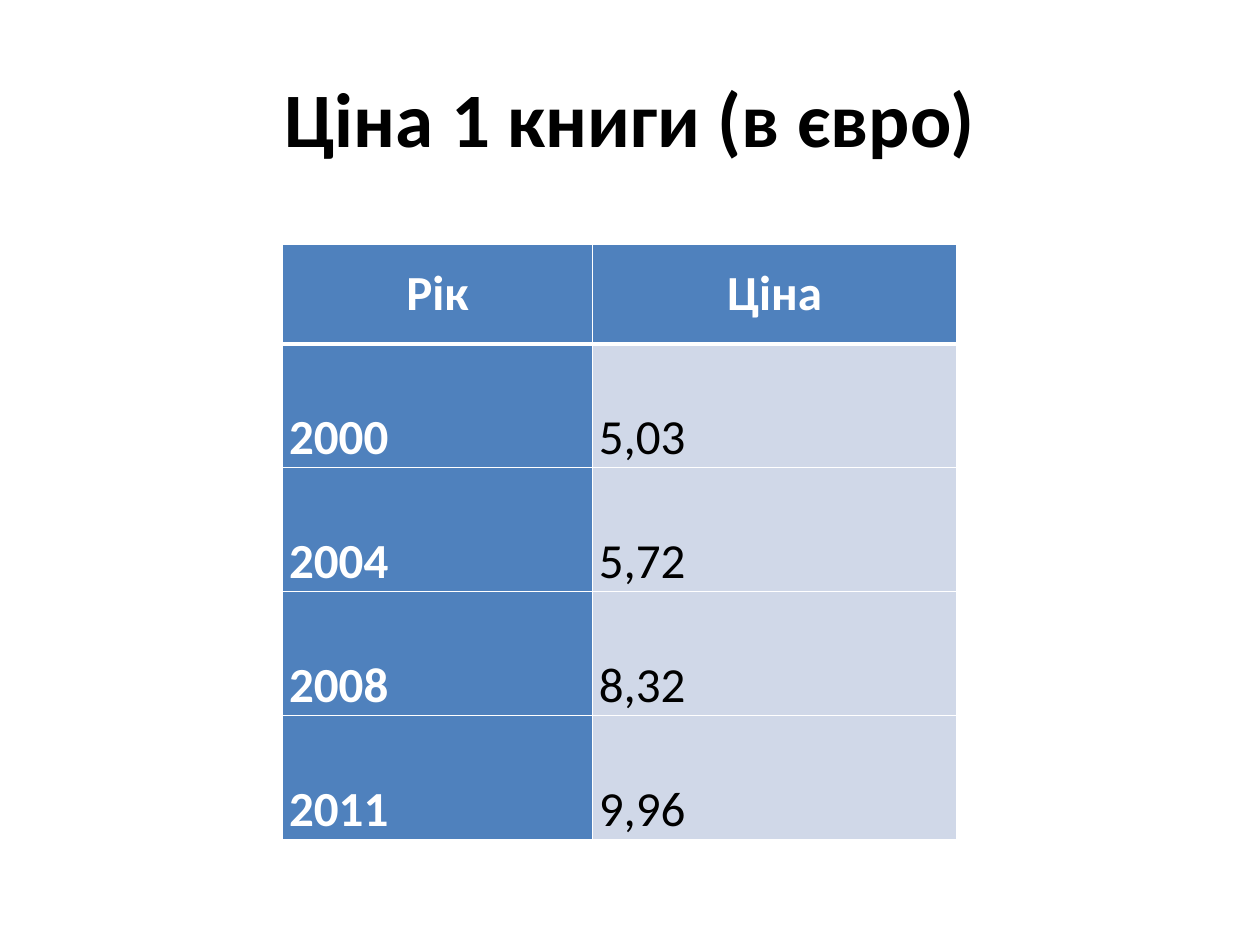
from lxml.etree import SubElement
from pptx import Presentation
from pptx.dml.color import RGBColor
from pptx.enum.text import MSO_ANCHOR, PP_ALIGN
from pptx.oxml.ns import qn
from pptx.util import Pt

WHITE, BLACK, BLUE, PALE = "FFFFFF", "000000", "4F81BD", "D0D8E8"
ROWS = [("Рік", "Ціна"), ("2000", "5,03"), ("2004", "5,72"), ("2008", "8,32"), ("2011", "9,96")]


def rgb(value):
    return RGBColor.from_string(value)


class Deck:
    """Holds the text style and the current slide."""

    def __init__(self, s, font="Calibri"):
        self.s, self.font = s, font

    def add_text(self, tf, text, size, color, bold, align):
        p = tf.paragraphs[0]
        p.alignment = align
        r = p.add_run()
        r.text = text
        r.font.name, r.font.size, r.font.bold = self.font, Pt(size), bold
        r.font.color.rgb = rgb(color)

    def title(self, text, left, top, width, height):
        tf = self.s.shapes.add_textbox(Pt(left), Pt(top), Pt(width), Pt(height)).text_frame
        tf.word_wrap = True
        tf.vertical_anchor = MSO_ANCHOR.MIDDLE
        self.add_text(tf, text, 44, BLACK, True, PP_ALIGN.CENTER)

    def border(self, cell, side, width):
        ln = SubElement(cell._tc.get_or_add_tcPr(), qn(f"a:ln{side}"), w=str(Pt(width)))
        SubElement(SubElement(ln, qn("a:solidFill")), qn("a:srgbClr"), val=WHITE)

    def cell(self, cell, text, is_header, is_label, top, bottom):
        strong = is_header or is_label
        for side, width in zip("LRTB", (1, 1, top, bottom)):
            self.border(cell, side, width)
        cell.fill.solid()
        cell.fill.fore_color.rgb = rgb(BLUE if strong else PALE)
        cell.margin_left = cell.margin_right = Pt(3.75)
        cell.margin_top = cell.margin_bottom = Pt(0)
        cell.vertical_anchor = MSO_ANCHOR.MIDDLE if is_header else MSO_ANCHOR.BOTTOM
        align = PP_ALIGN.CENTER if is_header else PP_ALIGN.LEFT
        self.add_text(cell.text_frame, text, 28, WHITE if strong else BLACK, strong, align)

    def table(self, rows, left, top, widths, heights):
        table = self.s.shapes.add_table(len(rows), len(widths), Pt(left), Pt(top),
                                        Pt(sum(widths)), Pt(sum(heights))).table
        for column, width in zip(table.columns, widths):
            column.width = Pt(width)
        for i, (row, height) in enumerate(zip(rows, heights)):
            table.rows[i].height = Pt(height)
            for j, text in enumerate(row):
                self.cell(table.cell(i, j), text, i == 0, j == 0,
                          3 if i == 1 else 1, 3 if i == 0 else 1)


def main():
    prs = Presentation()
    prs.slide_width, prs.slide_height = Pt(720), Pt(540)
    deck = Deck(prs.slides.add_slide(prs.slide_layouts[6]))
    deck.title("Ціна 1 книги (в євро)", 36, 21.6, 648, 90)
    deck.table(ROWS, 161.5, 139.75, [177, 208.25], [56.75] + [70.8] * 4)
    prs.save("out.pptx")


if __name__ == "__main__":
    main()
